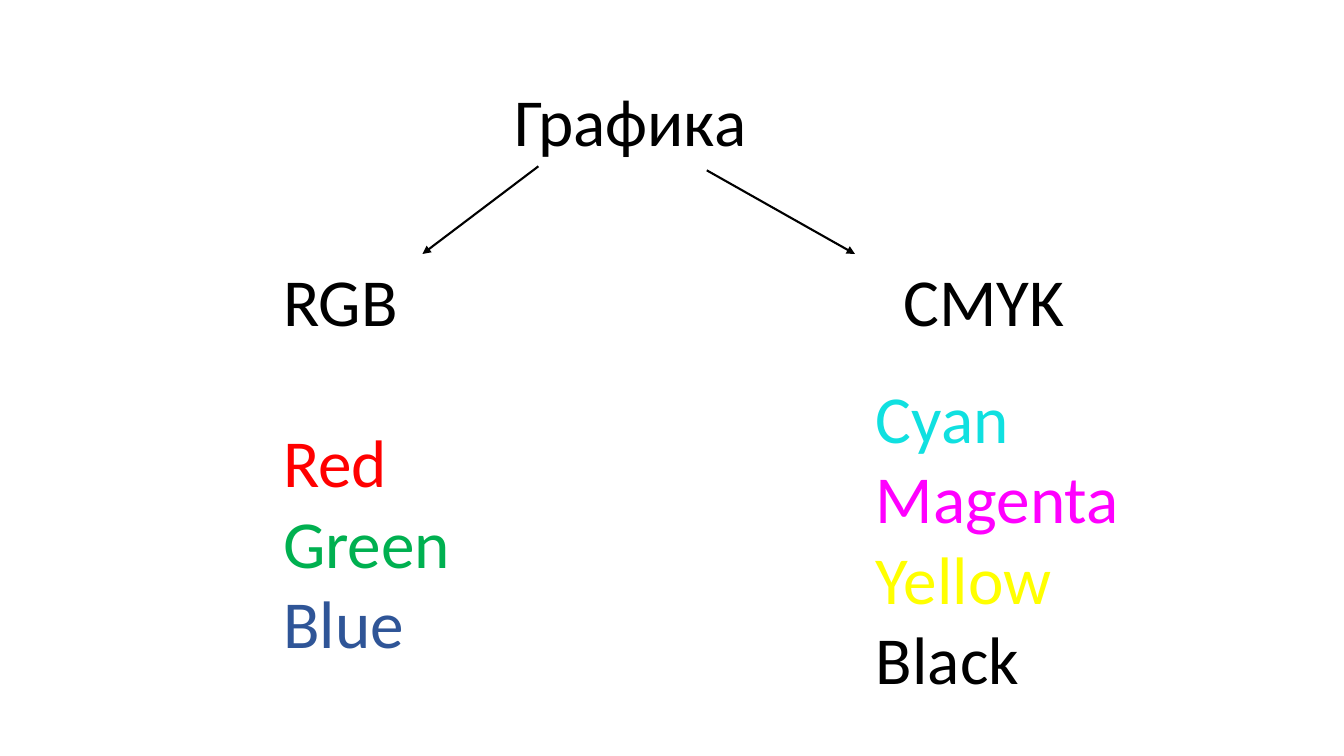
import pptx
import pptx.util
import pptx.dml.color
import pptx.enum.shapes
import pptx.enum.text
import pptx.oxml.ns
import lxml.etree

Inches = pptx.util.Inches

COLOURS = {
    "black": "000000", "red": "FF0000", "green": "00B050", "blue": "2F5597",
    "cyan": "10E0E0", "magenta": "FF00FF", "yellow": "FFFF00",
}

# Content: (left, top, width, height), then (text, colour) lines
TEXTS = [
    ((5, 0.74, 2.53, 0.91), [("Графика", "black")]),
    ((2.71, 2.52, 1.88, 0.91), [("RGB", "black")]),
    ((8.86, 2.52, 1.81, 0.91), [("CMYK", "black")]),
    ((2.71, 4.12, 1.88, 2.54),
     [("Red", "red"), ("Green", "green"), ("Blue", "blue")]),
    ((8.59, 3.68, 2.63, 3.33),
     [("Cyan", "cyan"), ("Magenta", "magenta"),
      ("Yellow", "yellow"), ("Black", "black")]),
]
ARROWS = [
    ((5.34, 1.65), (4.19, 2.52)),
    ((7.01, 1.69), (8.48, 2.52)),
]


def colour(name):
    return pptx.dml.color.RGBColor.from_string(COLOURS[name])


def add_text(page, place, lines, size=48, font="Calibri"):
    box = page.shapes.add_textbox(*map(Inches, place))
    frame = box.text_frame
    frame.word_wrap = False
    frame.auto_size = pptx.enum.text.MSO_AUTO_SIZE.SHAPE_TO_FIT_TEXT
    for index, (text, name) in enumerate(lines):
        para = frame.add_paragraph() if index else frame.paragraphs[0]
        span = para.add_run()
        span.text = text
        span.font.size = pptx.util.Pt(size)
        span.font.name = font
        span.font.color.rgb = colour(name)


def add_arrow(page, start, end):
    arrow = page.shapes.add_connector(
        pptx.enum.shapes.MSO_CONNECTOR.STRAIGHT, *map(Inches, start + end))
    arrow.line.color.rgb = colour("black")
    arrow.line.width = pptx.util.Pt(1.5)
    qn = pptx.oxml.ns.qn
    outline = arrow.line._get_or_add_ln()
    lxml.etree.SubElement(outline, qn("a:tailEnd"), type="triangle")
    lxml.etree.SubElement(outline.getparent(), qn("a:effectLst"))


def main():
    deck = pptx.Presentation()
    deck.slide_width, deck.slide_height = Inches(13.33), Inches(7.5)
    page = deck.slides.add_slide(deck.slide_layouts[6])

    # Title, colour models and their components
    for place, lines in TEXTS:
        add_text(page, place, lines)

    # Arrows from the title to each model
    for start, end in ARROWS:
        add_arrow(page, start, end)

    deck.save("out.pptx")


if __name__ == "__main__":
    main()
